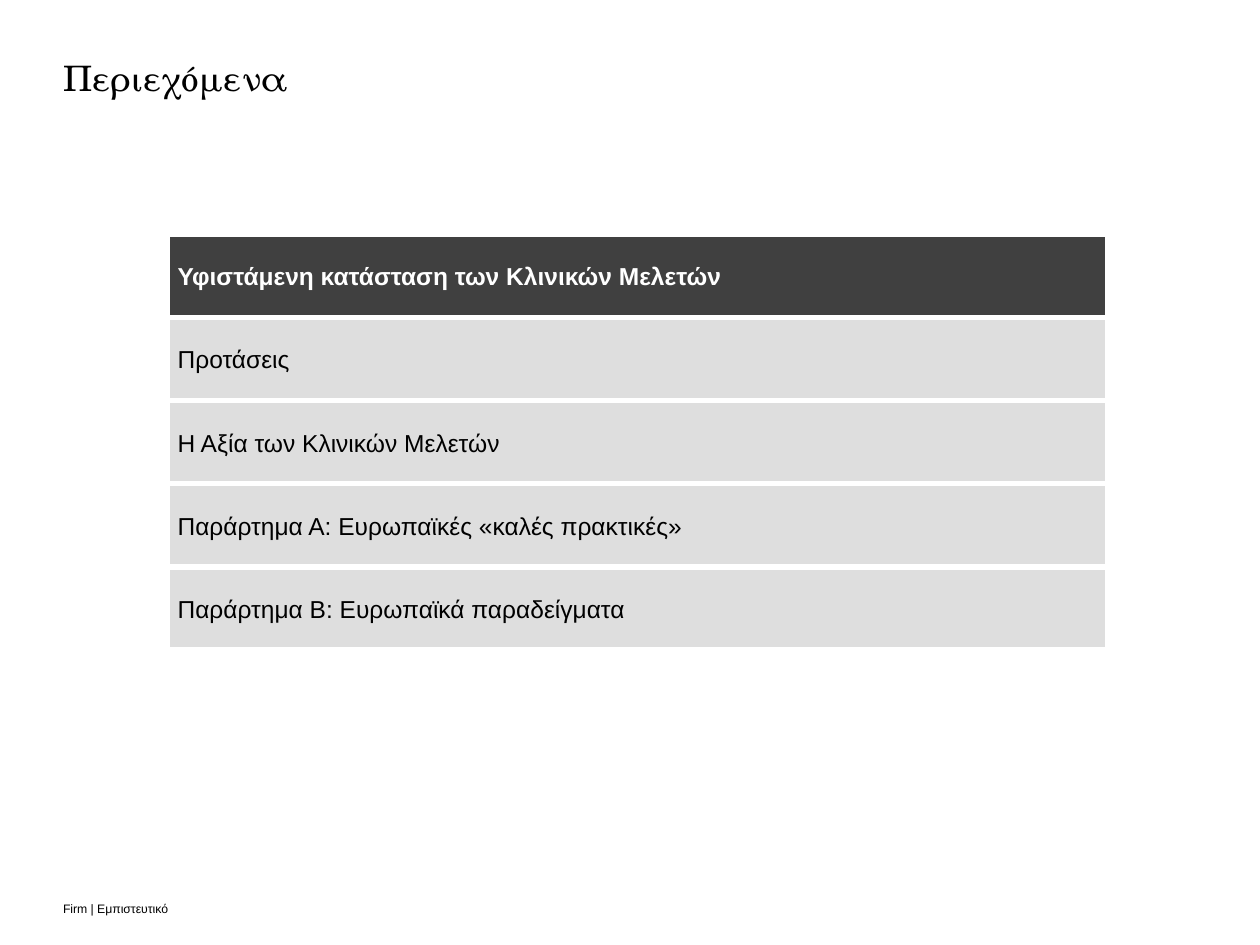
from typing import NamedTuple

from pptx import Presentation
from pptx import util as u
from pptx.dml.color import RGBColor
from pptx.enum import shapes, text

BLACK = RGBColor(0x00, 0x00, 0x00)
WHITE = RGBColor(0xFF, 0xFF, 0xFF)
DARK_GREY = RGBColor(0x40, 0x40, 0x40)
LIGHT_GREY = RGBColor(0xDE, 0xDE, 0xDE)

ROW_LEFT, ROW_TOP = 1.33, 1.86
ROW_WIDTH, ROW_HEIGHT = 7.46, 0.66


class Section(NamedTuple):
    label: str
    current: bool = False


SECTIONS = [
    Section("Υφιστάμενη κατάσταση των Κλινικών Μελετών", current=True),
    Section("Προτάσεις"),
    Section("Η Αξία των Κλινικών Μελετών"),
    Section("Παράρτημα Α: Ευρωπαϊκές «καλές πρακτικές»"),
    Section("Παράρτημα Β: Ευρωπαϊκά παραδείγματα"),
]


def write(s, label: str, color: RGBColor, anchor, font: dict,
          insets=(0, 0, 0, 0), line_spacing: float = 1.0) -> None:
    tf = s.text_frame
    frame = {"word_wrap": True, "auto_size": text.MSO_AUTO_SIZE.NONE,
             "vertical_anchor": anchor}
    for side, inset in zip(("left", "top", "right", "bottom"), insets):
        frame[f"margin_{side}"] = u.Inches(inset)
    for name, value in frame.items():
        setattr(tf, name, value)
    p = tf.paragraphs[0]
    p.alignment = text.PP_ALIGN.LEFT
    p.line_spacing = line_spacing
    r = p.add_run()
    r.text = label
    for name, value in font.items():
        setattr(r.font, name, value)
    r.font.color.rgb = color


def add_title(slide, label: str) -> None:
    s = slide.shapes.title
    place = {"left": 0.5, "top": 0.5, "width": 9, "height": 0.51}
    for name, value in place.items():
        setattr(s, name, u.Inches(value))
    write(s, label, BLACK, text.MSO_ANCHOR.TOP,
          {"name": "TeX Gyre Schola", "size": u.Pt(20)}, line_spacing=0.85)


def add_section(slide, index: int, section: Section) -> None:
    s = slide.shapes.add_shape(
        shapes.MSO_SHAPE.RECTANGLE, u.Inches(ROW_LEFT),
        u.Inches(ROW_TOP + index * ROW_HEIGHT),
        u.Inches(ROW_WIDTH), u.Inches(ROW_HEIGHT))
    s.shadow.inherit = False
    s.fill.solid()
    s.fill.fore_color.rgb = DARK_GREY if section.current else LIGHT_GREY
    s.line.color.rgb = WHITE
    s.line.width = u.Pt(3)
    write(s, section.label, WHITE if section.current else BLACK,
          text.MSO_ANCHOR.MIDDLE,
          {"name": "Arial", "size": u.Pt(14), "bold": section.current},
          insets=(0.08, 0.21, 0, 0.21))


def add_footer(slide, label: str) -> None:
    s = slide.shapes.add_textbox(
        u.Inches(0.5), u.Inches(7.12), u.Inches(4.35), u.Inches(0.15))
    write(s, label, BLACK, text.MSO_ANCHOR.BOTTOM,
          {"name": "Arial", "size": u.Pt(7)})


def main() -> None:
    prs = Presentation()
    prs.slide_width, prs.slide_height = u.Inches(10), u.Inches(7.5)
    slide = prs.slides.add_slide(prs.slide_layouts[5])
    add_footer(slide, "Firm | Εμπιστευτικό")
    add_title(slide, "Περιεχόμενα")
    for index, section in enumerate(SECTIONS):
        add_section(slide, index, section)
    prs.save("out.pptx")


if __name__ == "__main__":
    main()
